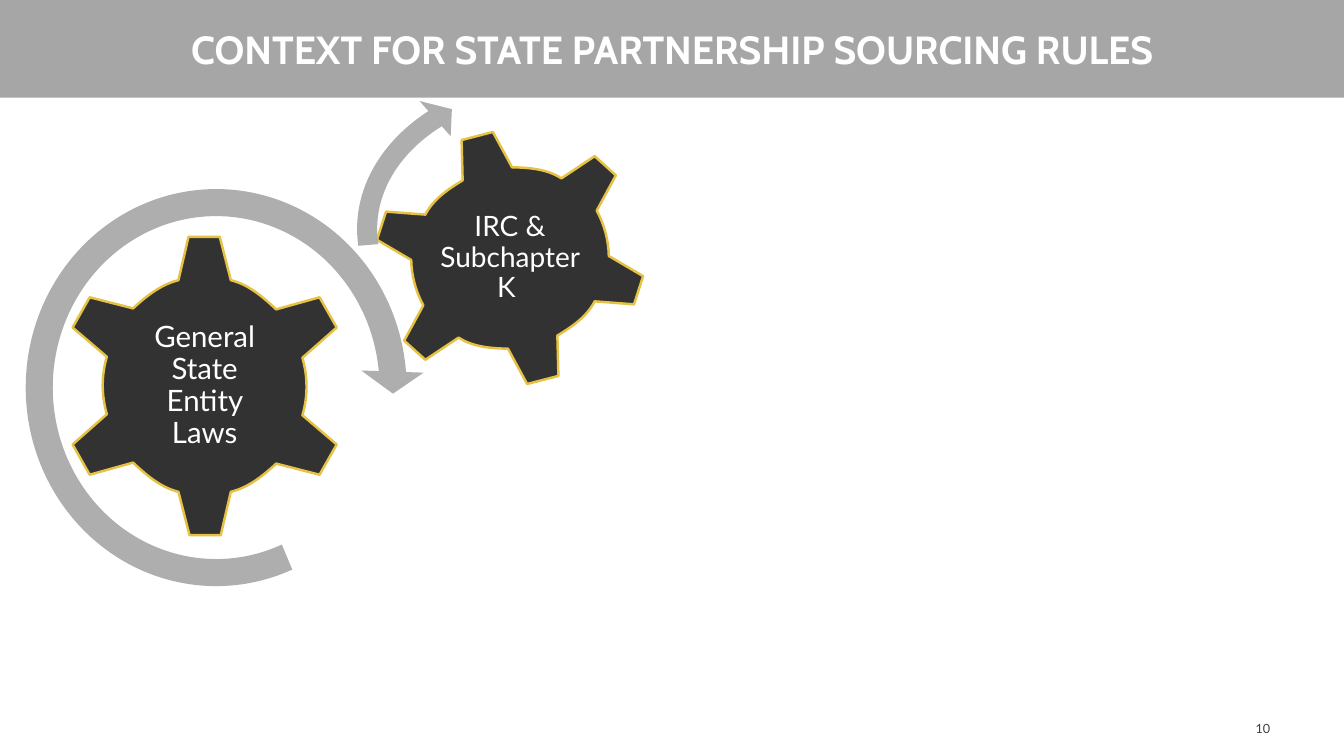
"""Build the slide on the context for state partnership sourcing rules."""
from math import atan2, tan, tau

from lxml.etree import SubElement
from pptx import Presentation
from pptx.dml.color import RGBColor
from pptx.enum.shapes import MSO_SHAPE as Shape
from pptx.enum.text import MSO_ANCHOR as Anchor, MSO_AUTO_SIZE as AutoSize, PP_ALIGN as Align
from pptx.oxml.ns import qn
from pptx.util import Inches, Pt

WHITE = RGBColor(0xFF, 0xFF, 0xFF)
BANNER_GRAY = RGBColor(0xA6, 0xA6, 0xA6)
ARROW_GRAY = RGBColor(0xAE, 0xAE, 0xAE)
GEAR_BLACK = RGBColor(0x32, 0x32, 0x32)
GOLD = RGBColor(0xE5, 0xC2, 0x43)
NUMBER_GRAY = RGBColor(0x40, 0x40, 0x40)
SLIDE_WIDTH = Inches(40) // 3

ENTITY_CENTRE = (2.03, 3.83)
ENTITY_TEETH = [
    [(1.77, 2.78), (1.87, 2.35), (2.18, 2.35), (2.29, 2.78)],
    [(2.74, 3.07), (3.17, 2.95), (3.34, 3.25), (3.0, 3.55)],
    [(3.0, 4.12), (3.34, 4.41), (3.17, 4.71), (2.74, 4.6)],
]
IRC_CENTRE = (5.06, 2.56)
IRC_TEETH = [
    [(4.59, 1.79), (4.58, 1.39), (4.89, 1.31), (5.08, 1.66)],
    [(5.57, 1.77), (5.9, 1.55), (6.11, 1.74), (5.92, 2.09)],
    [(6.04, 2.54), (6.38, 2.74), (6.29, 3.02), (5.9, 2.99)],
]


def write(shape, words, font, size, color, align, bold=False):
    """Put one formatted paragraph in the middle of a shape."""
    frame = shape.text_frame
    frame.text = words
    frame.word_wrap = True
    frame.auto_size = AutoSize.NONE
    frame.vertical_anchor = Anchor.MIDDLE
    paragraph = frame.paragraphs[0]
    paragraph.alignment = align
    for run in paragraph.runs:
        run.font.name = font
        run.font.size = Pt(size)
        run.font.bold = bold
        run.font.color.rgb = color
    return paragraph


def rim_controls(start, end, centre):
    """Return the two control points of the rim curve between teeth."""
    cx, cy = centre
    (x1, y1), (x2, y2) = [(x - cx, y - cy) for x, y in (start, end)]
    turn = (atan2(y2, x2) - atan2(y1, x1)) % tau
    reach = 4 / 3 * tan(turn / 4)
    return [(start[0] - reach * y1, start[1] + reach * x1),
            (end[0] + reach * y2, end[1] - reach * x2)]


def curve_rims(gear):
    """Turn the last three of every six outline steps into one curve."""
    steps = list(gear.element.iter(qn("a:lnTo")))
    for first in range(3, len(steps), 6):
        rim_steps = steps[first:first + 3]
        outline = rim_steps[0].getparent()
        curve = SubElement(outline, qn("a:cubicBezTo"))
        outline.replace(rim_steps[0], curve)
        for step in rim_steps:
            curve.append(step[0])
        for step in rim_steps[1:]:
            outline.remove(step)


def add_gear(slide, centre, half_teeth, words, size, inset):
    """Draw a gear from half its teeth, mirrored through the centre."""
    cx, cy = centre
    teeth = half_teeth + [[(2 * cx - x, 2 * cy - y) for x, y in tooth]
                          for tooth in half_teeth]
    outline = []
    for tooth, following in zip(teeth, teeth[1:] + teeth[:1]):
        outline += tooth + rim_controls(tooth[-1], following[0], centre)
    points = [(Inches(x), Inches(y)) for x, y in outline]
    builder = slide.shapes.build_freeform(*points[0])
    builder.add_line_segments(points[1:] + points[:1], close=True)
    gear = builder.convert_to_shape()
    curve_rims(gear)
    gear.shadow.inherit = False
    gear.fill.solid()
    gear.fill.fore_color.rgb = GEAR_BLACK
    gear.line.color.rgb = GOLD
    gear.line.width = Pt(1.75)
    write(gear, words, "Lato", size, WHITE, Align.CENTER).line_spacing = 0.9
    frame = gear.text_frame
    frame.margin_left = frame.margin_right = Inches(inset)
    frame.margin_top = frame.margin_bottom = Inches(inset)


def add_turn_arrow(slide, box, adjustments, flipped=False):
    """Draw a circular arrow that shows how a gear turns."""
    arrow = slide.shapes.add_shape(Shape.CIRCULAR_ARROW, *map(Inches, box))
    for index, value in enumerate(adjustments):
        arrow.adjustments[index] = value
    if flipped:
        frame = arrow.element.spPr.find(qn("a:xfrm"))
        frame.set("flipH", "1")
        frame.set("flipV", "1")
    arrow.shadow.inherit = False
    arrow.fill.solid()
    arrow.fill.fore_color.rgb = ARROW_GRAY
    arrow.line.fill.background()


def add_banner(slide, words):
    """Turn the title placeholder into the banner across the top."""
    banner = slide.shapes.title
    banner.left, banner.top = Inches(0), Inches(-0.01)
    banner.width, banner.height = SLIDE_WIDTH, Inches(0.98)
    banner.fill.solid()
    banner.fill.fore_color.rgb = BANNER_GRAY
    write(banner, words, "Cabin", 28, WHITE, Align.CENTER, bold=True)


def add_page_number(slide, number):
    """Write the page number at the lower right."""
    page = slide.shapes.add_textbox(Inches(11.55), Inches(7.03), Inches(1.15), Inches(0.4))
    write(page, number, "Lato", 9, NUMBER_GRAY, Align.RIGHT)


def main():
    """Assemble and save the slide."""
    deck = Presentation()
    deck.slide_width, deck.slide_height = SLIDE_WIDTH, Inches(7.5)
    slide = deck.slides.add_slide(deck.slide_layouts[5])
    add_banner(slide, "CONTEXT FOR STATE PARTNERSHIP SOURCING RULES")
    add_gear(slide, ENTITY_CENTRE, ENTITY_TEETH, "General State Entity Laws", 21, 0.62)
    add_gear(slide, IRC_CENTRE, IRC_TEETH, "IRC & Subchapter K ", 20, 0.59)
    add_turn_arrow(slide, (0.08, 1.7, 4.13, 4.29),
                   (0.065, 4.3, 104.89, 148.38, 0.075), flipped=True)
    add_turn_arrow(slide, (3.41, 0.61, 4.25, 3.32),
                   (0.06, 3.94, 133.14, 105.08, 0.07))
    add_page_number(slide, "10")
    deck.save("out.pptx")


if __name__ == "__main__":
    main()
